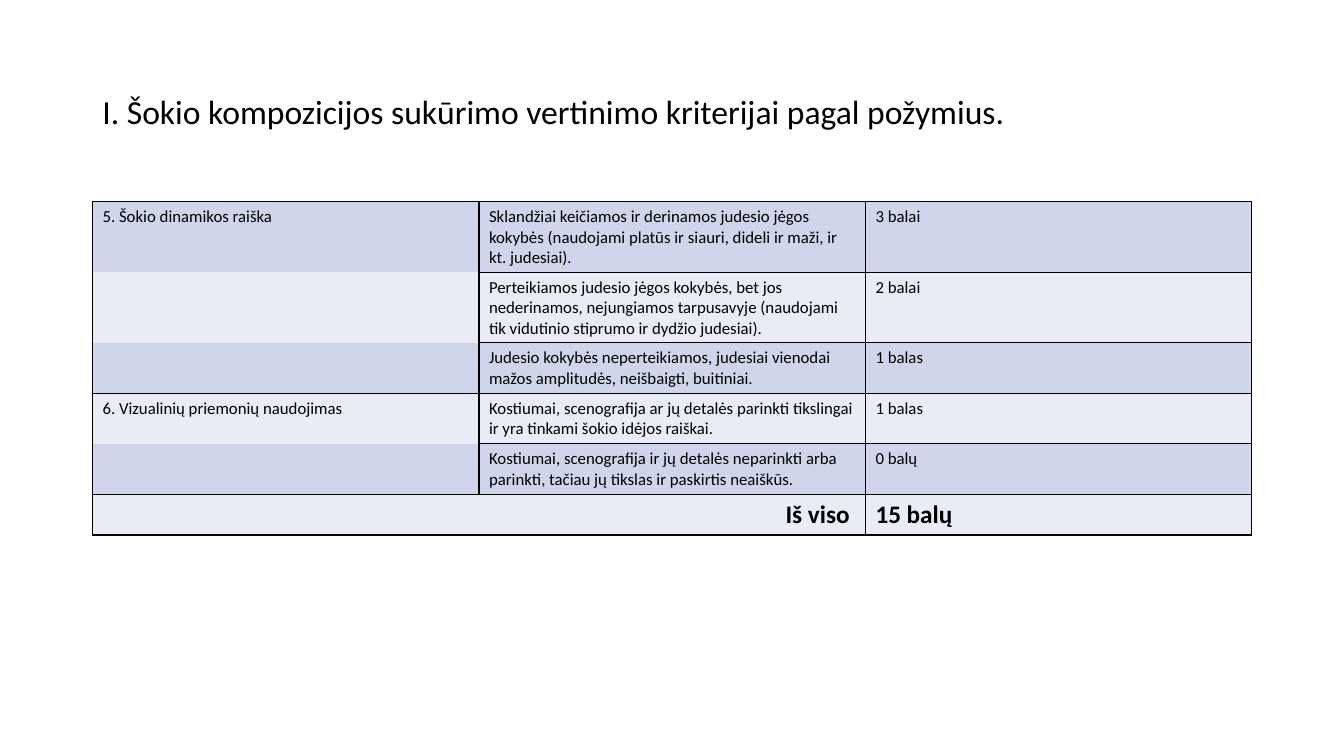
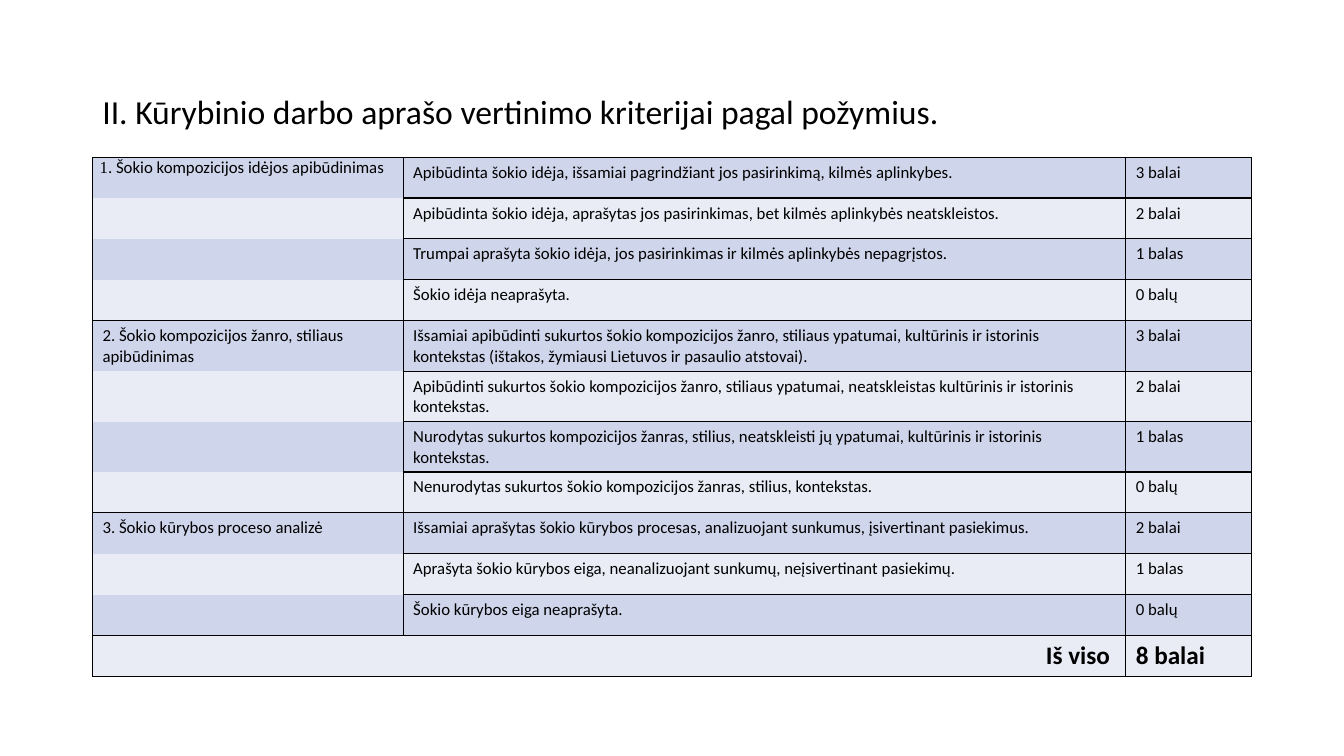
"""Builds two slides of dance assessment criteria, each with a title and a scoring table."""

from typing import NamedTuple

from lxml.etree import SubElement
from pptx import Presentation
from pptx.dml.color import RGBColor
from pptx.enum.text import MSO_ANCHOR as Anchor, PP_ALIGN as Align
from pptx.oxml.ns import qn
from pptx.util import Cm, Pt

COLORS = {"text": "000000", "border": "000000", "dark_band": "CFD5EA", "light_band": "E9EBF5"}
BANDS = ("dark_band", "light_band")
FONT = "Calibri"
NUMBER_FONT = "Times New Roman"
TITLE_SIZE, BODY_SIZE, TOTAL_SIZE = 24, 12, 18
LEFT, CONTENT_WIDTH = 2.33, 29.21
TITLE_TOP, TITLE_HEIGHT = 1.02, 3.68
ROW_HEIGHT = 1.03
BORDER_WIDTH = 1
EDGES = "LRTB"


class Level(NamedTuple):
    description: str
    points: str


class Criterion(NamedTuple):
    name: str
    levels: list[Level]
    number: str = ""


class Section(NamedTuple):
    title: str
    table_top: float
    column_widths: tuple[float, float, float]
    criteria: list[Criterion]
    total: str


SECTIONS = [
    Section(
        "I. Šokio kompozicijos sukūrimo vertinimo kriterijai pagal požymius.",
        5.08,
        (9.74, 9.74, 9.73),
        [
            Criterion("5. Šokio dinamikos raiška", [
                Level("Sklandžiai keičiamos ir derinamos judesio jėgos kokybės (naudojami platūs "
                      "ir siauri, dideli ir maži, ir kt. judesiai).", "3 balai"),
                Level("Perteikiamos judesio jėgos kokybės, bet jos nederinamos, nejungiamos "
                      "tarpusavyje (naudojami tik vidutinio stiprumo ir dydžio judesiai).", "2 balai"),
                Level("Judesio kokybės neperteikiamos, judesiai vienodai mažos amplitudės, "
                      "neišbaigti, buitiniai.", "1 balas"),
            ]),
            Criterion("6. Vizualinių priemonių naudojimas", [
                Level("Kostiumai, scenografija ar jų detalės parinkti tikslingai ir yra tinkami "
                      "šokio idėjos raiškai.", "1 balas"),
                Level("Kostiumai, scenografija ir jų detalės neparinkti arba parinkti, tačiau jų "
                      "tikslas ir paskirtis neaiškūs.", "0 balų"),
            ]),
        ],
        "15 balų",
    ),
    Section(
        "II. Kūrybinio darbo aprašo vertinimo kriterijai pagal požymius.",
        3.96,
        (7.83, 18.21, 3.17),
        [
            Criterion(". Šokio kompozicijos idėjos apibūdinimas", [
                Level("Apibūdinta šokio idėja, išsamiai pagrindžiant jos pasirinkimą, kilmės "
                      "aplinkybes.", "3 balai"),
                Level("Apibūdinta šokio idėja, aprašytas jos pasirinkimas, bet kilmės aplinkybės "
                      "neatskleistos.", "2 balai"),
                Level("Trumpai aprašyta šokio idėja, jos pasirinkimas ir kilmės aplinkybės "
                      "nepagrįstos.", "1 balas"),
                Level("Šokio idėja neaprašyta.", "0 balų"),
            ], number="1"),
            Criterion("2. Šokio kompozicijos žanro, stiliaus apibūdinimas", [
                Level("Išsamiai apibūdinti sukurtos šokio kompozicijos žanro, stiliaus ypatumai, "
                      "kultūrinis ir istorinis kontekstas (ištakos, žymiausi Lietuvos ir pasaulio "
                      "atstovai).", "3 balai"),
                Level("Apibūdinti sukurtos šokio kompozicijos žanro, stiliaus ypatumai, "
                      "neatskleistas kultūrinis ir istorinis kontekstas.", "2 balai"),
                Level("Nurodytas sukurtos kompozicijos žanras, stilius, neatskleisti jų ypatumai, "
                      "kultūrinis ir istorinis kontekstas.", "1 balas"),
                Level("Nenurodytas sukurtos šokio kompozicijos žanras, stilius, kontekstas.", "0 balų"),
            ]),
            Criterion("3. Šokio kūrybos proceso analizė", [
                Level("Išsamiai aprašytas šokio kūrybos procesas, analizuojant sunkumus, "
                      "įsivertinant pasiekimus.", "2 balai"),
                Level("Aprašyta šokio kūrybos eiga, neanalizuojant sunkumų, neįsivertinant "
                      "pasiekimų.", "1 balas"),
                Level("Šokio kūrybos eiga neaprašyta.", "0 balų"),
            ]),
        ],
        "8 balai",
    ),
]


def format_runs(paragraph, size: int, bold: bool = False) -> None:
    for run in paragraph.runs:
        run.font.name = FONT
        run.font.size = Pt(size)
        run.font.bold = bold
        run.font.color.rgb = RGBColor.from_string(COLORS["text"])


def write_cell(cell, text: str, size: int = BODY_SIZE, bold: bool = False) -> None:
    cell.text_frame.text = text
    format_runs(cell.text_frame.paragraphs[0], size, bold)


def write_numbered_cell(cell, criterion: Criterion) -> None:
    paragraph = cell.text_frame.paragraphs[0]
    for text in (criterion.number, criterion.name):
        paragraph.add_run().text = text
    format_runs(paragraph, BODY_SIZE)
    paragraph.runs[0].font.name = NUMBER_FONT
    cell.margin_left = cell.margin_right = Cm(0.18)
    cell.margin_top = cell.margin_bottom = Cm(0)


def style_cell(cell, band: str, edges: str) -> None:
    properties = cell._tc.get_or_add_tcPr()
    for edge in EDGES:
        line = SubElement(properties, qn(f"a:ln{edge}"), w=str(Pt(BORDER_WIDTH)))
        if edge in edges:
            fill = SubElement(line, qn("a:solidFill"))
            SubElement(fill, qn("a:srgbClr"), val=COLORS["border"])
        else:
            SubElement(line, qn("a:noFill"))
    cell.fill.solid()
    cell.fill.fore_color.rgb = RGBColor.from_string(COLORS[band])


def style_row(table, row: int, first_edges: str, second_edges: str = EDGES) -> None:
    for column, edges in enumerate((first_edges, second_edges, EDGES)):
        style_cell(table.cell(row, column), BANDS[row % 2], edges)


def add_title(slide, text: str) -> None:
    shape = slide.shapes.add_textbox(Cm(LEFT), Cm(TITLE_TOP), Cm(CONTENT_WIDTH), Cm(TITLE_HEIGHT))
    text_frame = shape.text_frame
    text_frame.word_wrap = True
    text_frame.vertical_anchor = Anchor.MIDDLE
    text_frame.text = text
    paragraph = text_frame.paragraphs[0]
    paragraph.line_spacing = 0.9
    format_runs(paragraph, TITLE_SIZE)


def add_criterion(table, criterion: Criterion, first_row: int) -> None:
    name_cell = table.cell(first_row, 0)
    if criterion.number:
        write_numbered_cell(name_cell, criterion)
    else:
        write_cell(name_cell, criterion.name)
    last = len(criterion.levels) - 1
    for index, level in enumerate(criterion.levels):
        row = first_row + index
        write_cell(table.cell(row, 1), level.description)
        write_cell(table.cell(row, 2), level.points)
        style_row(table, row, "LR" + "T" * (index == 0) + "B" * (index == last))


def add_total(table, total: str, row: int) -> None:
    label_cell = table.cell(row, 1)
    write_cell(label_cell, "Iš viso ", TOTAL_SIZE, bold=True)
    label_cell.text_frame.paragraphs[0].alignment = Align.RIGHT
    write_cell(table.cell(row, 2), total, TOTAL_SIZE, bold=True)
    style_row(table, row, "LTB", "RTB")


def add_criteria_table(slide, section: Section) -> None:
    row_count = sum(len(criterion.levels) for criterion in section.criteria) + 1
    table = slide.shapes.add_table(
        row_count, len(section.column_widths), Cm(LEFT), Cm(section.table_top),
        Cm(CONTENT_WIDTH), Cm(ROW_HEIGHT * row_count),
    ).table
    table.first_row = table.horz_banding = False
    for column, width in zip(table.columns, section.column_widths):
        column.width = Cm(width)
    for row in table.rows:
        row.height = Cm(ROW_HEIGHT)
    next_row = 0
    for criterion in section.criteria:
        add_criterion(table, criterion, next_row)
        next_row += len(criterion.levels)
    add_total(table, section.total, next_row)


def main() -> None:
    presentation = Presentation()
    presentation.slide_width, presentation.slide_height = Cm(33.87), Cm(19.05)
    blank_layout = presentation.slide_layouts[6]
    for section in SECTIONS:
        slide = presentation.slides.add_slide(blank_layout)
        add_title(slide, section.title)
        add_criteria_table(slide, section)
    presentation.save("out.pptx")


if __name__ == "__main__":
    main()
